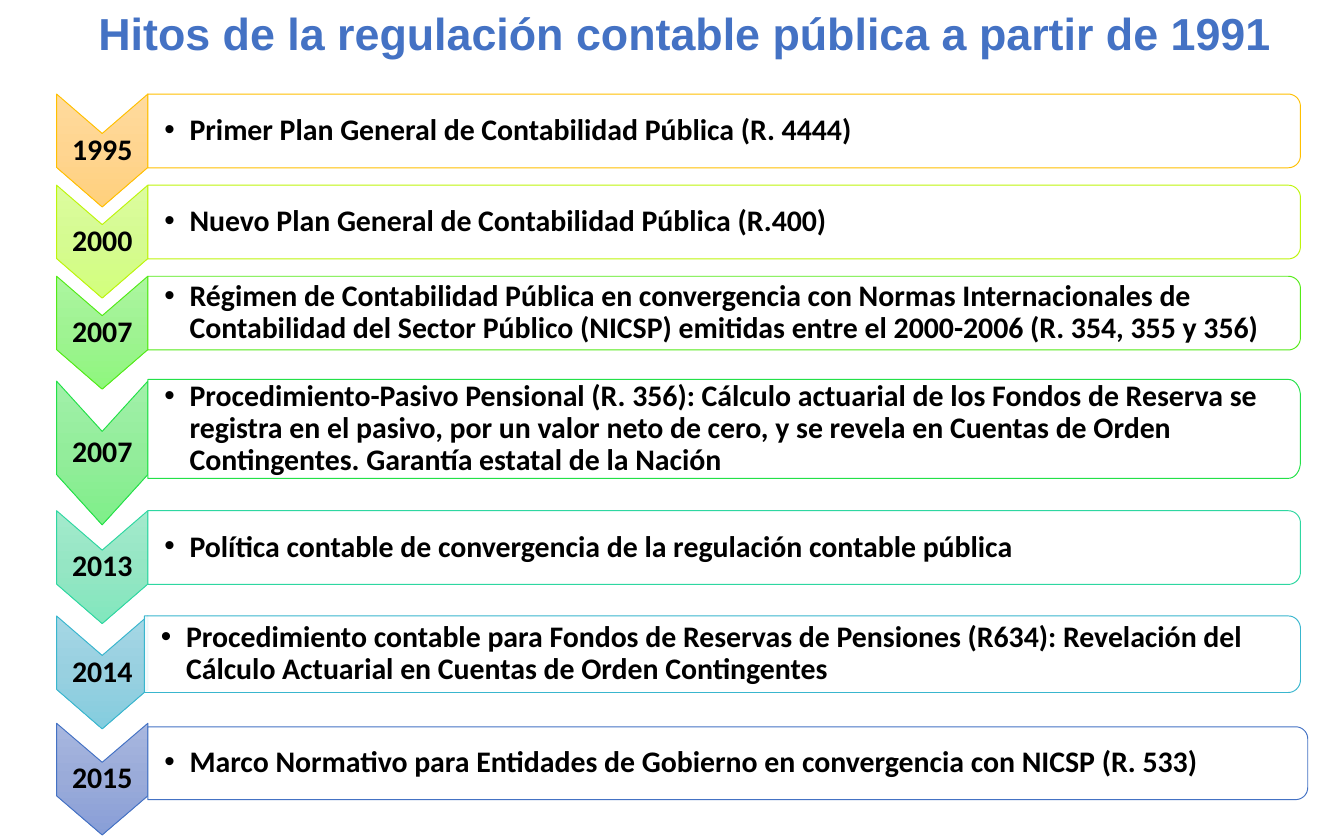
import copy
import math
from dataclasses import dataclass

import pptx
import pptx.dml.color
import pptx.enum.text
import pptx.oxml.ns
import pptx.util
from lxml import etree

Pt = pptx.util.Pt
Rgb = pptx.dml.color.RGBColor.from_string
Align = pptx.enum.text.PP_ALIGN
Middle = pptx.enum.text.MSO_ANCHOR.MIDDLE
qn = pptx.oxml.ns.qn


@dataclass(frozen=True)
class Theme:
    head: str = "4472C4"
    ink: str = "000000"
    card: str = "FFFFFF"
    big: float = 24
    body: float = 16
    rule: float = 0.5
    sans: str = "Arial"
    text: str = "Calibri"


THEME = Theme()
LEFT, EDGE, RIGHT = 30.3, 79.2, 696.7  # chevron left, card left, card right


@dataclass
class Step:
    year: str
    note: str
    top: float
    line: str
    tints: tuple
    tall: float = 60.5  # chevron height
    drop: float = 0  # card top, relative to the chevron
    high: float = 39.5  # card height
    left: float = EDGE
    right: float = RIGHT


STEPS = [
    Step("1995", "Primer Plan General de Contabilidad Pública (R. 4444)",
         50.4, "FFC000", ("FFDB9E", "FFD590", "FFD07C")),
    Step("2000", "Nuevo Plan General de Contabilidad Pública (R.400)",
         99.2, "BEF50C", ("DCFC9F", "D5FB91", "D3FF7C")),
    Step("2007", "Régimen de Contabilidad Pública en convergencia con Normas "
         "Internacionales de Contabilidad del Sector Público (NICSP) emitidas "
         "entre el 2000-2006 (R. 354, 355 y 356)",
         148, "53EB17", ("ACF6A0", "9FF392", "8EF77D")),
    Step("2007", "Procedimiento-Pasivo Pensional (R. 356): Cálculo actuarial de "
         "los Fondos de Reserva se registra en el pasivo, por un valor neto de "
         "cero, y se revela en Cuentas de Orden Contingentes. Garantía estatal "
         "de la Nación",
         204.2, "23E148", ("A1F0A9", "93ED9B", "7FEF89"),
         tall=77, drop=-0.9, high=53),
    Step("2013", "Política contable de convergencia de la regulación contable pública",
         273.6, "2ED7A1", ("A3EACC", "95E6C4", "81E7BD")),
    Step("2014", "Procedimiento contable para Fondos de Reservas de Pensiones "
         "(R634): Revelación del Cálculo Actuarial en Cuentas de Orden Contingentes",
         330, "39B6CE", ("A5D7E5", "98D0E0", "84CDDF"), high=41, left=77.3),
    Step("2015", "Marco Normativo para Entidades de Gobierno en convergencia con "
         "NICSP (R. 533)",
         387.5, "4472C4", ("A8B7DF", "9AABD9", "889ED7"),
         tall=59.8, drop=1.9, high=39, right=700.6),
]


def outline(slide, points, line):
    """Closed outline through points given in points of length."""
    dots = [(Pt(x), Pt(y)) for x, y in points]
    pen = slide.shapes.build_freeform(*dots[0])
    pen.add_line_segments(dots[1:], close=True)
    shape = pen.convert_to_shape()
    shape.shadow.inherit = False
    shape.line.color.rgb = Rgb(line)
    shape.line.width = Pt(THEME.rule)
    return shape


def style(para, face, size, color):
    para.line_spacing = 0.9
    for run in para.runs:
        run.font.name = face
        run.font.size = Pt(size)
        run.font.bold = True
        run.font.color.rgb = Rgb(color)


def write(shape, text, pads, align):
    frame = shape.text_frame
    frame.text = text
    frame.word_wrap = True
    frame.vertical_anchor = Middle
    (frame.margin_left, frame.margin_top,
     frame.margin_right, frame.margin_bottom) = [Pt(p) for p in pads]
    para = frame.paragraphs[0]
    para.alignment = align
    style(para, THEME.text, THEME.body, THEME.ink)
    return para


def shade(shape, tints):
    """Even vertical gradient, first tint on top."""
    shape.fill.gradient()
    shape.fill.gradient_angle = 270
    stops = shape._element.spPr.find(qn("a:gradFill")).find(qn("a:gsLst"))
    stops.insert(1, copy.deepcopy(stops[0]))
    for i, (stop, tint) in enumerate(zip(shape.fill.gradient_stops, tints)):
        stop.position = i / (len(tints) - 1)
        stop.color.rgb = Rgb(tint)


def add_year(slide, step):
    mid, end = (LEFT + EDGE) / 2, step.top + step.tall
    notch = 0.35 * step.tall
    shape = outline(slide, [
        (EDGE, step.top), (EDGE, end - notch), (mid, end),
        (LEFT, end - notch), (LEFT, step.top), (mid, step.top + notch),
    ], step.line)
    shade(shape, step.tints)
    write(shape, step.year, (0.7, 22, 0.7, 22), Align.CENTER)


def add_note(slide, step):
    top = step.top + step.drop
    end = top + step.high
    wide, deep = 6.5, step.high / 6  # corner radii
    turns = [math.radians(a) for a in range(0, 91, 10)]
    upper = [(step.right - wide + wide * math.sin(a),
              top + deep - deep * math.cos(a)) for a in turns]
    lower = [(x, top + end - y) for x, y in reversed(upper)]
    shape = outline(slide, [(step.left, top), *upper, *lower, (step.left, end)],
                    step.line)
    # Slightly see-through card
    shape.fill.solid()
    shape.fill.fore_color.rgb = Rgb(THEME.card)
    tone = shape._element.spPr.find(qn("a:solidFill"))[0]
    etree.SubElement(tone, qn("a:alpha"), val="90000")
    # Bulleted text
    para = write(shape, step.note, (8.9, 2.9, 2.9, 2.9), Align.LEFT)
    para.level = 1
    props = para._p.get_or_add_pPr()
    props.set("marL", str(Pt(13.5)))
    props.set("indent", str(-Pt(13.5)))
    etree.SubElement(props, qn("a:buFont"), typeface=THEME.sans)
    etree.SubElement(props, qn("a:buChar"), char="•")


def add_title(slide, text):
    title = slide.shapes.title
    title.left, title.top = Pt(-5.8), Pt(3.6)
    title.width, title.height = Pt(745.2), Pt(31)
    frame = title.text_frame
    frame.text = text
    frame.vertical_anchor = Middle
    frame.auto_size = pptx.enum.text.MSO_AUTO_SIZE.NONE
    para = frame.paragraphs[0]
    para.alignment = Align.CENTER
    style(para, THEME.sans, THEME.big, THEME.head)


def main():
    deck = pptx.Presentation()
    deck.slide_width, deck.slide_height = Pt(720), Pt(450)
    slide = deck.slides.add_slide(deck.slide_layouts[5])
    add_title(slide, "Hitos de la regulación contable pública a partir de 1991")
    # Timeline, one chevron and card per milestone
    for step in STEPS:
        add_year(slide, step)
        add_note(slide, step)
    deck.save("out.pptx")


if __name__ == "__main__":
    main()
